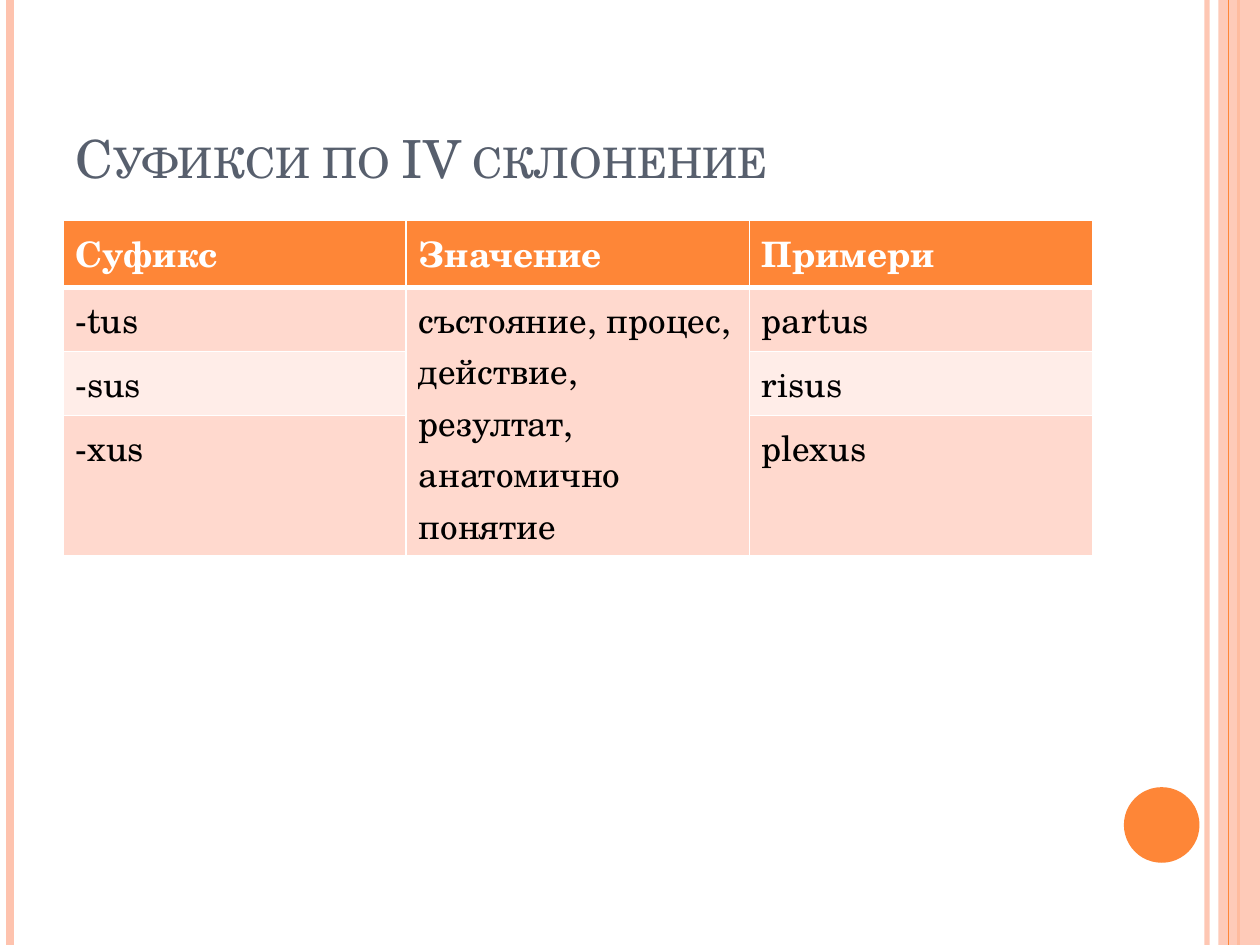
"""Build a slide on the suffixes of the fourth Latin declension."""
from dataclasses import dataclass

from lxml import etree
from pptx import Presentation
from pptx.dml.color import RGBColor
from pptx.enum.shapes import MSO_CONNECTOR, MSO_SHAPE
from pptx.enum.text import MSO_ANCHOR
from pptx.oxml.ns import qn
from pptx.util import Inches, Pt

STRAIGHT = MSO_CONNECTOR.STRAIGHT
RECTANGLE, OVAL = MSO_SHAPE.RECTANGLE, MSO_SHAPE.OVAL
BOTTOM = MSO_ANCHOR.BOTTOM

ORANGE = RGBColor(0xFE, 0x86, 0x37)
PEACH = RGBColor(0xFE, 0xC3, 0xAE)
SLATE = RGBColor(0x57, 0x5F, 0x6D)
BAND_DARK = RGBColor(0xFF, 0xD9, 0xCE)
BAND_LIGHT = RGBColor(0xFF, 0xED, 0xE8)
WHITE = RGBColor(0xFF, 0xFF, 0xFF)
BLACK = RGBColor(0, 0, 0)

FONT = "TeX Gyre Schola"
WIDTH, HEIGHT = Inches(10), Inches(7.5)
MARGIN, CONTENT_WIDTH = Inches(0.5), Inches(8.17)
ROW_HEIGHTS = (Inches(0.53), Inches(0.51), Inches(0.51), Inches(1.11))

TITLE = "Суфикси по IV склонение"
SUFFIX_ROWS = (
    ("Суфикс", "Значение", "Примери"),
    ("-tus", "състояние, процес, действие, резултат, анатомично понятие", "partus"),
    ("-sus", "", "risus"),
    ("-xus", "", "plexus"),
)


@dataclass(frozen=True)
class Rail:
    """A full-height stripe at a share of the slide's width."""
    across: float
    color: RGBColor
    points: float
    opacity: int = 100


@dataclass(frozen=True)
class Ornament:
    """A filled preset shape placed by shares of the slide's size."""
    preset: int
    left: float
    top: float
    width: float
    height: float
    color: RGBColor
    opacity: int = 100


RAILS_BEHIND = (
    Rail(0.958, PEACH, 3, 93),
    Rail(0.008, PEACH, 4.5),
    Rail(0.983, ORANGE, 1.5),
)
SIDE_BAND = Ornament(RECTANGLE, 0.967, 0, 0.033, 1, PEACH, 87)
RAIL_IN_FRONT = Rail(0.975, ORANGE, 0.75)
PAGE_DOT = Ornament(OVAL, 0.892, 0.833, 0.06, 0.08, ORANGE)


def set_opacity(properties, percent: int) -> None:
    """Make the first solid colour below an element translucent."""
    if percent < 100:
        color = next(properties.iter(qn("a:srgbClr")))
        etree.SubElement(color, qn("a:alpha")).set("val", str(percent * 1000))


def draw_rail(slide, rail: Rail) -> None:
    """Draw a vertical stripe."""
    across = int(WIDTH * rail.across)
    stripe = slide.shapes.add_connector(STRAIGHT, across, 0, across, HEIGHT)
    stripe.line.color.rgb = rail.color
    stripe.line.width = Pt(rail.points)
    properties = stripe._element.spPr
    set_opacity(properties, rail.opacity)
    etree.SubElement(properties, qn("a:effectLst"))


def draw_ornament(slide, ornament: Ornament) -> None:
    """Draw a borderless filled shape."""
    shape = slide.shapes.add_shape(
        ornament.preset,
        int(WIDTH * ornament.left), int(HEIGHT * ornament.top),
        int(WIDTH * ornament.width), int(HEIGHT * ornament.height))
    shape.shadow.inherit = False
    shape.fill.solid()
    shape.fill.fore_color.rgb = ornament.color
    shape.line.fill.background()
    set_opacity(shape._element.spPr, ornament.opacity)


def style_font(font, points: float, color: RGBColor, bold: bool = False) -> None:
    """Set typeface, size, weight and colour."""
    font.name, font.size, font.bold = FONT, Pt(points), bold
    font.color.rgb = color


def draw_title(slide) -> None:
    """Write the heading in small capitals."""
    box = slide.shapes.add_textbox(MARGIN, Inches(0.3), CONTENT_WIDTH, Inches(1.25))
    frame = box.text_frame
    frame.word_wrap = True
    frame.vertical_anchor = BOTTOM
    heading = frame.paragraphs[0]
    heading.text = TITLE
    style_font(heading.font, 30, SLATE)
    heading.runs[0]._r.get_or_add_rPr().set("cap", "small")


def add_borders(cell, top: float, bottom: float) -> None:
    """Give a cell white borders, one point wide at the sides."""
    properties = cell._tc.get_or_add_tcPr()
    for side, points in (("L", 1), ("R", 1), ("T", top), ("B", bottom)):
        border = etree.SubElement(properties, qn(f"a:ln{side}"), w=str(Pt(points)))
        fill = etree.SubElement(border, qn("a:solidFill"))
        etree.SubElement(fill, qn("a:srgbClr"), val=str(WHITE))


def draw_suffix_table(slide) -> None:
    """Draw the suffixes with their shared meaning and examples."""
    rows, columns = len(SUFFIX_ROWS), len(SUFFIX_ROWS[0])
    table = slide.shapes.add_table(
        rows, columns, MARGIN, Inches(1.75), CONTENT_WIDTH, sum(ROW_HEIGHTS)).table
    for row, texts in enumerate(SUFFIX_ROWS):
        table.rows[row].height = ROW_HEIGHTS[row]
        header = row == 0
        band = ORANGE if header else (BAND_LIGHT, BAND_DARK)[row % 2]
        for column, text in enumerate(texts):
            cell = table.cell(row, column)
            add_borders(cell, 3 if row == 1 else 1, 3 if header else 1)
            cell.fill.solid()
            cell.fill.fore_color.rgb = band
            cell.text = text
            style_font(cell.text_frame.paragraphs[0].font, 20,
                       WHITE if header else BLACK, header)
    table.cell(1, 1).merge(table.cell(rows - 1, 1))


def main() -> None:
    """Assemble and save the slide."""
    deck = Presentation()
    deck.slide_width, deck.slide_height = WIDTH, HEIGHT
    slide = deck.slides.add_slide(deck.slide_layouts[6])
    for rail in RAILS_BEHIND:
        draw_rail(slide, rail)
    draw_ornament(slide, SIDE_BAND)
    draw_rail(slide, RAIL_IN_FRONT)
    draw_ornament(slide, PAGE_DOT)
    draw_title(slide)
    draw_suffix_table(slide)
    deck.save("out.pptx")


if __name__ == "__main__":
    main()
